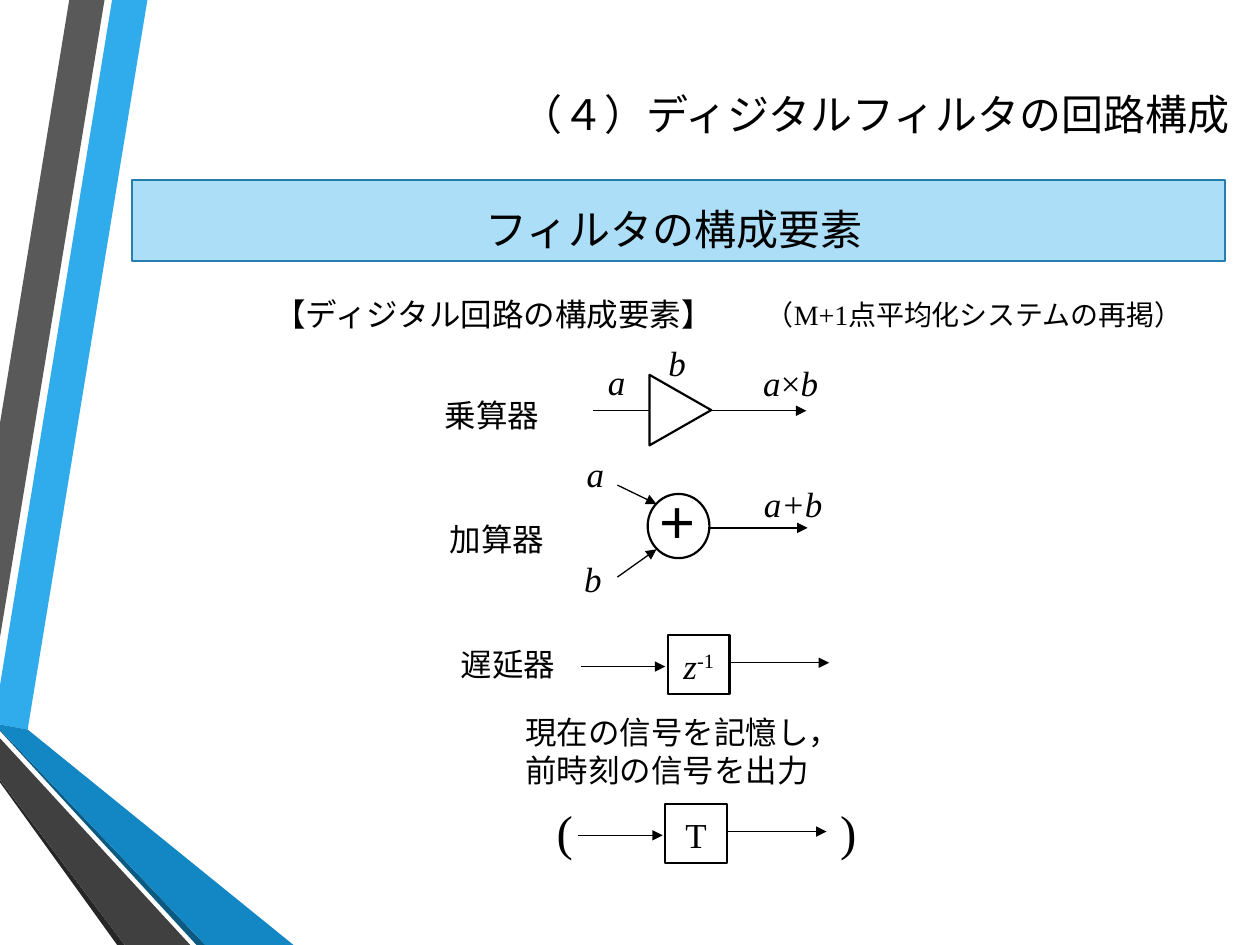
from lxml import etree
from pptx import Presentation
from pptx.dml.color import RGBColor
from pptx.enum.shapes import MSO_CONNECTOR, MSO_SHAPE
from pptx.enum.text import MSO_ANCHOR, PP_ALIGN
from pptx.oxml.ns import qn
from pptx.util import Pt

PX = 9144  # 100 px to the inch
SERIF = "Times New Roman"
BLACK, WHITE = "000000", "FFFFFF"
LEFT, CENTER, RIGHT, JUSTIFY = (PP_ALIGN.LEFT, PP_ALIGN.CENTER,
                                PP_ALIGN.RIGHT, PP_ALIGN.JUSTIFY)
TOP, MIDDLE = MSO_ANCHOR.TOP, MSO_ANCHOR.MIDDLE
RECT, OVAL, TRIANGLE = MSO_SHAPE.RECTANGLE, MSO_SHAPE.OVAL, MSO_SHAPE.ISOSCELES_TRIANGLE
STRAIGHT = MSO_CONNECTOR.STRAIGHT

# Ribbons at the left edge: colour and corner points
RIBBONS = [
    ("30ACEC", [(0, 544), (0, 575), (22, 579), (117, 0), (89, 0)]),
    ("595959", [(83, 0), (55, 0), (0, 336), (0, 506)]),
    ("262626", [(0, 619), (0, 621), (93, 750), (99, 750)]),
    ("0C5A82", [(0, 579), (0, 580), (156, 750), (163, 750)]),
    ("1287C3", [(0, 579), (163, 750), (233, 750), (22, 579), (0, 575)]),
    ("404040", [(0, 619), (99, 750), (151, 750), (0, 586)]),
]


def px(*values):
    return [v * PX for v in values]


def rgb(color):
    return RGBColor.from_string(color)


def ribbon(s, color, points):
    fb = s.shapes.build_freeform(*points[0], scale=PX)
    fb.add_line_segments(points[1:], close=True)
    sp = fb.convert_to_shape()
    sp.shadow.inherit = False
    sp.fill.solid()
    sp.fill.fore_color.rgb = rgb(color)
    sp.line.fill.background()


def write(sp, runs, size, align=LEFT, anchor=TOP, spacing=None,
          font=SERIF, bold=False, margins=None):
    """Fill a shape with one paragraph; runs are (text, style) pairs."""
    tf = sp.text_frame
    tf.word_wrap = True
    tf.vertical_anchor = anchor
    if margins:
        (tf.margin_left, tf.margin_top,
         tf.margin_right, tf.margin_bottom) = px(*margins)
    p = tf.paragraphs[0]
    p.alignment = align
    if spacing:
        p.line_spacing = Pt(spacing)
    for text, style in runs:
        r = p.add_run()
        r.text = text
        r.font.size = Pt(size)
        r.font.name = font
        r.font.bold = bold
        r.font.italic = style == "italic"
        r.font.color.rgb = rgb(BLACK)
        if style == "super":
            r.font._element.set("baseline", "30000")
    return p


def text(s, box, content, size, align=LEFT, anchor=TOP, spacing=None):
    sp = s.shapes.add_textbox(*px(*box))
    return write(sp, [(content, "")], size, align, anchor, spacing)


def symbol(s, x, y, *runs, w=43, h=42):
    sp = s.shapes.add_textbox(*px(x, y, w, h))
    write(sp, runs, 20, CENTER, MIDDLE, 16, margins=(0, 0, 0, 0))


def shape(s, kind, box, fill=WHITE, line=BLACK):
    sp = s.shapes.add_shape(kind, *px(*box))
    sp.shadow.inherit = False
    sp.fill.solid()
    sp.fill.fore_color.rgb = rgb(fill)
    sp.line.color.rgb = rgb(line)
    sp.line.width = Pt(1.25)
    return sp


def arrow(s, x1, y1, x2, y2):
    c = s.shapes.add_connector(STRAIGHT, *px(x1, y1, x2, y2))
    c.line.color.rgb = rgb(BLACK)
    c.line.width = Pt(0.75)
    etree.SubElement(c.line._get_or_add_ln(), qn("a:tailEnd"), type="triangle")
    etree.SubElement(c._element.spPr, qn("a:effectLst"))


def delay(s, x, y, *runs):
    """Delay box with its input and output arrows."""
    box = shape(s, RECT, (x, y, 49, 47))
    write(box, runs, 20, CENTER, MIDDLE, 16, margins=(0, 12, 0, 0))
    arrow(s, x + 49, y + 22, x + 128, y + 22)
    arrow(s, x - 69, y + 25, x - 2, y + 25)


def headings(s):
    shape(s, RECT, (105, 143, 867, 64), "ACDEF7", "247FAF")
    p = text(s, (119, 150, 832, 55), "フィルタの構成要素", 24, CENTER, spacing=33.6)
    p.space_before = p.space_after = Pt(6)
    text(s, (370, 23, 616, 134), "（４）ディジタルフィルタの回路構成", 24, RIGHT, MIDDLE)
    text(s, (208, 229, 379, 40), "【ディジタル回路の構成要素】", 18)
    text(s, (598, 231, 374, 37), "（M+1点平均化システムの再掲）", 16)


def multiplier(s):
    text(s, (343, 309, 114, 40), "乗算器", 18)
    arrow(s, 471, 326, 640, 326)
    shape(s, TRIANGLE, (512, 301, 56, 49)).rotation = 90
    symbol(s, 516, 272, ("b", "italic"))
    symbol(s, 468, 287, ("a", "italic"))
    symbol(s, 587, 289, ("a", "italic"), ("×", ""), ("b", "italic"), w=81, h=40)


def adder(s):
    text(s, (347, 408, 114, 40), "加算器", 18)
    circle = shape(s, OVAL, (514, 392, 49, 51))
    write(circle, [("＋", "")], 24, JUSTIFY, MIDDLE, 16, "Cabin", True, (0, 12, 0, 0))
    arrow(s, 562, 419, 641, 419)
    arrow(s, 490, 385, 521, 400)
    arrow(s, 490, 458, 521, 436)
    symbol(s, 451, 360, ("a", "italic"))
    symbol(s, 449, 444, ("b", "italic"))
    symbol(s, 589, 385, ("a+b", "italic"), w=81, h=40)


def delays(s):
    text(s, (356, 507, 114, 40), "遅延器", 18)
    delay(s, 530, 504, ("z", "italic"), ("-1", "super"))
    text(s, (407, 561, 261, 71), "現在の信号を記憶し，前時刻の信号を出力", 18)
    delay(s, 528, 638, ("T", ""))
    for x, bracket in ((432, "("), (657, ")")):
        text(s, (x, 631, 46, 57), bracket, 28)


def main():
    prs = Presentation()
    prs.slide_width, prs.slide_height = px(1000, 750)
    s = prs.slides.add_slide(prs.slide_layouts[6])
    for color, points in RIBBONS:
        ribbon(s, color, points)
    headings(s)
    multiplier(s)
    adder(s)
    delays(s)
    prs.save("out.pptx")


if __name__ == "__main__":
    main()
